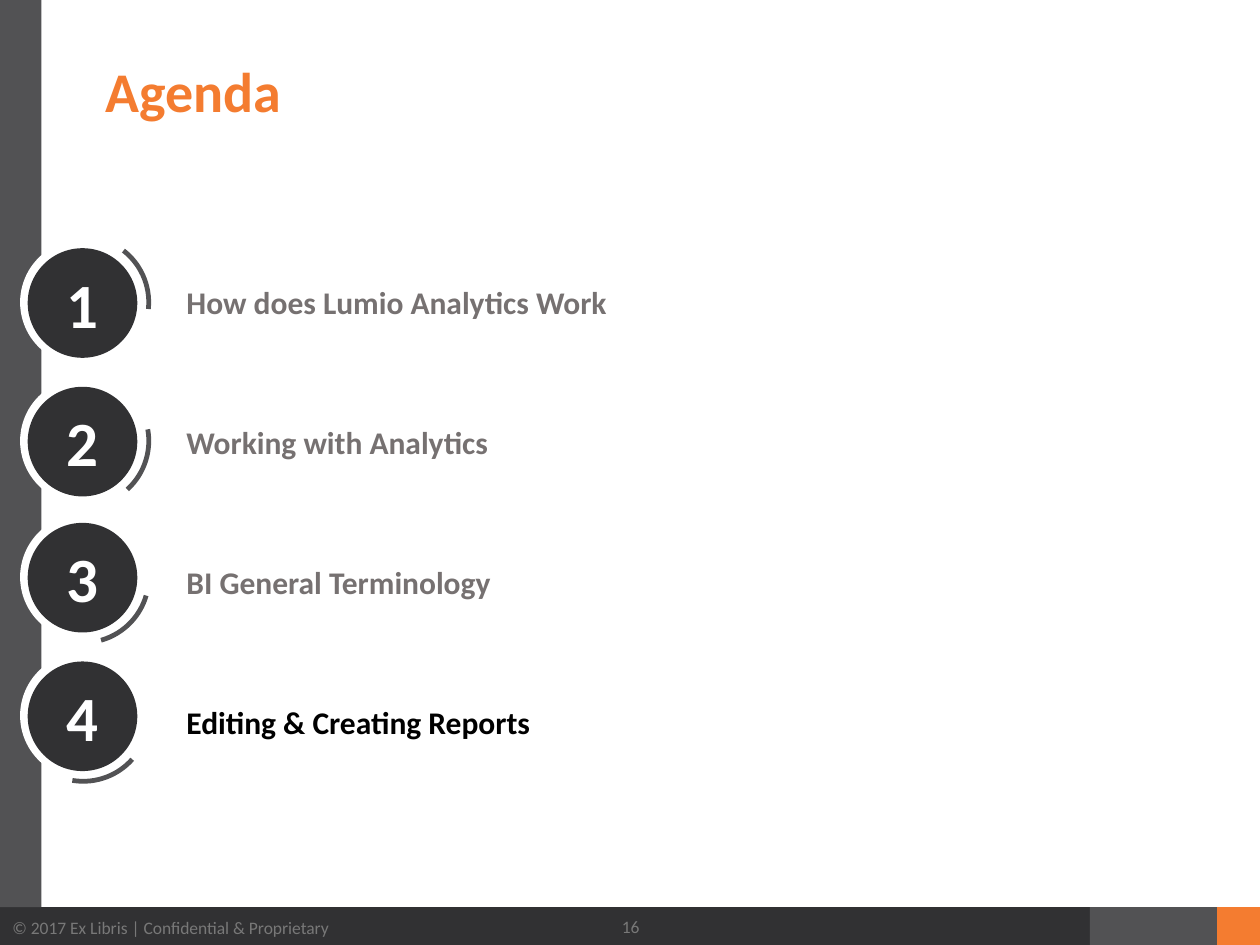
import pptx
import pptx.util
import pptx.dml.color
import pptx.enum.shapes
import pptx.enum.text

Inches = pptx.util.Inches
Shapes = pptx.enum.shapes.MSO_SHAPE
Align = pptx.enum.text.PP_ALIGN
Anchor = pptx.enum.text.MSO_ANCHOR

DARK, GRAY, ORANGE, WHITE = "313133", "525254", "F47C30", "FFFFFF"
MUTED, FOOTER = "767171", "787878"


def add_filled(kind, left, top, width, height, color):
    shape = slide.shapes.add_shape(kind, Inches(left), Inches(top), Inches(width), Inches(height))
    shape.shadow.inherit = False
    shape.fill.solid()
    shape.fill.fore_color.rgb = pptx.dml.color.RGBColor.from_string(color)
    shape.line.fill.background()
    return shape


def write(shape, text, size, color, bold=False, align=Align.LEFT, anchor=Anchor.MIDDLE):
    frame = shape.text_frame
    frame.word_wrap = True
    frame.vertical_anchor = anchor
    frame.text = text
    paragraph = frame.paragraphs[0]
    paragraph.alignment = align
    paragraph.font.name = "Calibri"
    paragraph.font.size = pptx.util.Pt(size)
    paragraph.font.bold = bold
    paragraph.font.color.rgb = pptx.dml.color.RGBColor.from_string(color)
    return paragraph


presentation = pptx.Presentation()
presentation.slide_width = Inches(10)
presentation.slide_height = Inches(7.5)
slide = presentation.slides.add_slide(presentation.slide_layouts[5])

footer = add_filled(Shapes.RECTANGLE, 0, 7.2, 8.65, 0.32, DARK)
write(footer, "© 2017 Ex Libris | Confidential & Proprietary", 10, FOOTER)
add_filled(Shapes.RECTANGLE, 8.65, 7.2, 1.01, 0.32, GRAY)
add_filled(Shapes.RECTANGLE, 9.66, 7.2, 0.35, 0.32, ORANGE)
add_filled(Shapes.RECTANGLE, 0, 0, 0.33, 7.2, GRAY)

title = slide.shapes.title
title.left, title.top = Inches(0.74), Inches(0.46)
title.width, title.height = Inches(8.5), Inches(1.19)
write(title, "Agenda", 32, ORANGE, bold=True, anchor=Anchor.TOP).line_spacing = 0.9

page_number = slide.shapes.add_textbox(Inches(4.42), Inches(7.16), Inches(1.17), Inches(0.39))
write(page_number, "16", 10, FOOTER, align=Align.CENTER)

agenda = [
    ("How does Lumio Analytics Work", 1.9, 5.1, MUTED),
    ("Working with Analytics", 3.0, 47, MUTED),
    ("BI General Terminology", 4.08, 73.5, MUTED),
    ("Editing & Creating Reports", 5.18, 98.8, "000000"),
]
for index, (topic, top, rotation, color) in enumerate(agenda):
    add_filled(Shapes.OVAL, 0.16, top, 1, 1, WHITE)

    arc = add_filled(Shapes.BLOCK_ARC, 0.12, top - 0.04, 1.08, 1.08, GRAY)
    arc.rotation = rotation
    for position, value in enumerate((181.725, 0.424, 0.035)):
        arc.adjustments[position] = value

    badge = add_filled(Shapes.OVAL, 0.22, top + 0.07, 0.87, 0.87, DARK)
    write(badge, str(index + 1), 36, WHITE, bold=True, align=Align.CENTER)

    label = slide.shapes.add_textbox(Inches(1.43), Inches(2.05 + 1.11 * index), Inches(6.07), Inches(0.7))
    write(label, topic, 18, color, bold=True)
    label.text_frame.margin_left = label.text_frame.margin_right = Inches(0.05)

presentation.save("out.pptx")
